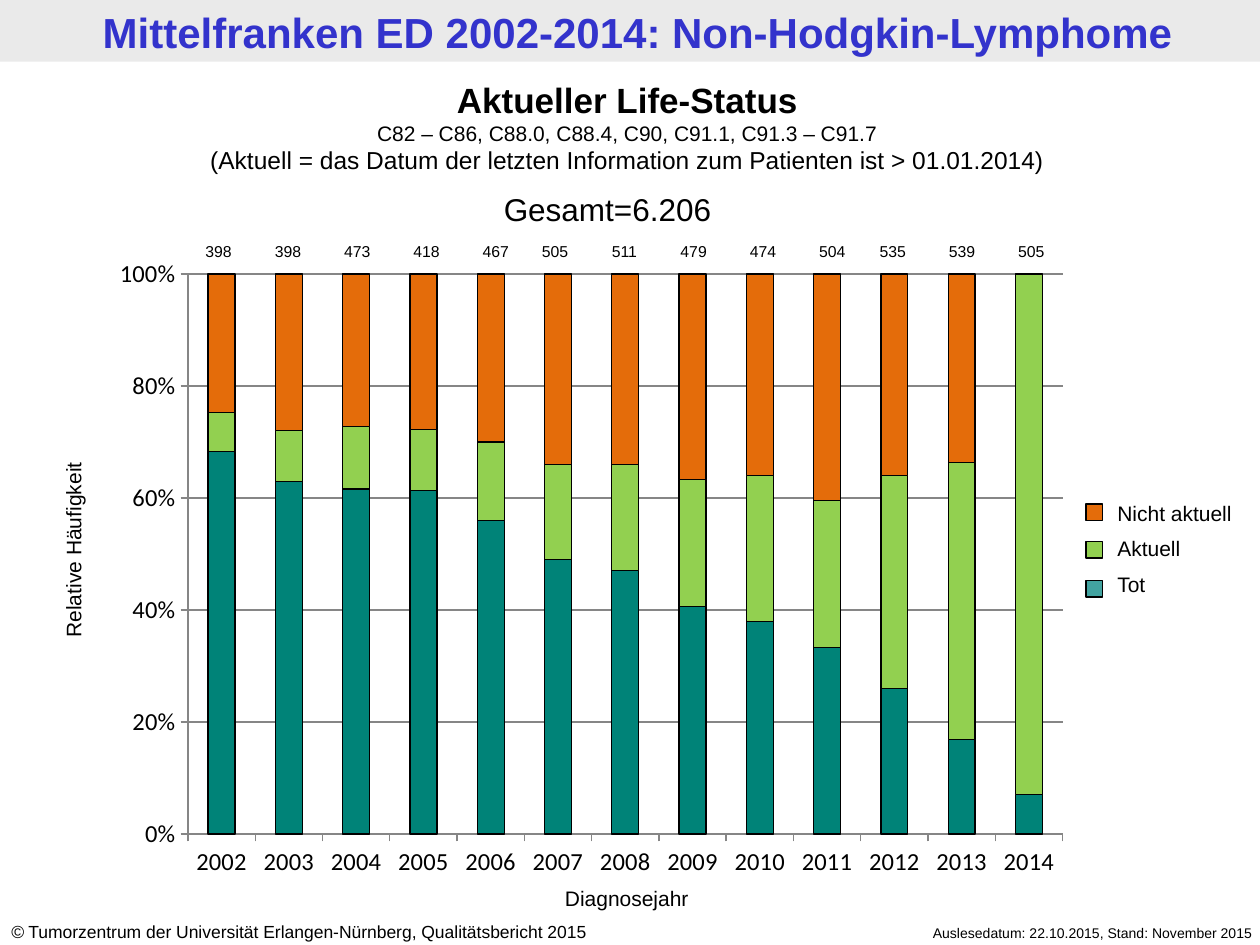
"""Builds the life status slide with a stacked column chart."""
from lxml.etree import SubElement
from pptx import Presentation
from pptx.chart.data import CategoryChartData
from pptx.dml.color import RGBColor
from pptx.enum.chart import XL_CHART_TYPE, XL_TICK_MARK
from pptx.enum.shapes import MSO_SHAPE
from pptx.enum.text import MSO_ANCHOR, PP_ALIGN
from pptx.oxml.ns import qn
from pptx.util import Inches, Pt

HUES = {"band": "EAEAEA", "title": "3333CC", "text": "000000", "dead": "008378",
        "key": "008380", "fresh": "92D050", "stale": "E46C0A", "grid": "868686"}
LEFT, MID, RIGHT = PP_ALIGN.LEFT, PP_ALIGN.CENTER, PP_ALIGN.RIGHT


def hue(name):
    return RGBColor.from_string(HUES[name])


def write(shape, text, size=12, bold=False, italic=False, color="text",
          align=LEFT, gap=0, more=False, join=False):
    frame = shape.text_frame
    frame.word_wrap = True
    para = frame.add_paragraph() if more else frame.paragraphs[0]
    para.alignment = align
    if gap:
        para.space_before = Pt(gap)
    run = para.add_run()
    run.text = text
    font = run.font
    font.name, font.size, font.bold, font.italic = "Arial", Pt(size), bold, italic
    font.color.rgb = hue(color)


deck = Presentation()
deck.slide_width, deck.slide_height = Inches(10), Inches(7.5)
slide = deck.slides.add_slide(deck.slide_layouts[5])
shapes = slide.shapes

title = shapes.title
title.left, title.top, title.width, title.height = map(Inches, (0.06, 0.01, 10, 0.49))
title.text_frame.vertical_anchor = MSO_ANCHOR.MIDDLE
write(title, "Mittelfranken ED 2002-2014: Non-Hodgkin-Lymphome",
      size=24, bold=True, color="title", align=MID)

band = shapes.add_shape(MSO_SHAPE.RECTANGLE, 0, 0, Inches(10), Inches(0.49))
band.shadow.inherit = False
band.fill.solid()
band.fill.fore_color.rgb = hue("band")
band.line.fill.background()
title.element.addprevious(band.element)

data = CategoryChartData()
data.categories = [str(year) for year in range(2002, 2015)]
rows = [
    ("Tot", "dead", (69, 63, 61, 62, 56, 49, 47, 41, 38, 33, 26, 17, 7)),
    ("Aktuell", "fresh", (7, 9, 11, 11, 14, 17, 19, 23, 26, 26, 38, 50, 93)),
    ("Nicht aktuell", "stale", (25, 28, 27, 28, 30, 34, 34, 37, 36, 40, 36, 34, 0)),
]
for name, color, vals in rows:
    data.add_series(name, vals)
chart = shapes.add_chart(XL_CHART_TYPE.COLUMN_STACKED_100, Inches(0.79), Inches(1.95),
                         Inches(7.8), Inches(5.11), data).chart
chart.has_legend = chart.has_title = False
chart.font.name, chart.font.size = "Calibri", Pt(14)
chart.font.color.rgb = hue("text")

plot = chart.plots[0]
plot.gap_width, plot.overlap, plot.vary_by_categories = 150, 100, False
for serie, (name, color, vals) in zip(plot.series, rows):
    serie.format.fill.solid()
    serie.format.fill.fore_color.rgb = hue(color)
    serie.format.line.color.rgb = hue("text")
    serie.format.line.width = Pt(0.75)

scale = chart.value_axis
scale.minimum_scale, scale.maximum_scale, scale.major_unit = 0, 1, 0.2
scale.tick_labels.number_format = "0%"
scale.tick_labels.number_format_is_linked = False
scale.has_major_gridlines = True
for axis in (scale, chart.category_axis):
    axis.major_tick_mark = XL_TICK_MARK.OUTSIDE
    axis.tick_labels.font.size = Pt(14)
for part in (scale, chart.category_axis, scale.major_gridlines):
    part.format.line.color.rgb = hue("grid")
    part.format.line.width = Pt(0.75)

area = chart.element.find(".//" + qn("c:plotArea"))
for old in area.findall(qn("c:layout")):
    area.remove(old)
layout = SubElement(area, qn("c:layout"))
area.insert(0, layout)
manual = SubElement(layout, qn("c:manualLayout"))
for tag, val in (("layoutTarget", "inner"), ("xMode", "edge"), ("yMode", "edge"),
                 ("x", "0.09"), ("y", "0.044"), ("w", "0.89"), ("h", "0.87")):
    SubElement(manual, qn("c:" + tag)).set("val", val)

texts = [
    ((6.65, 7.29, 3.39, 0.24), "Auslesedatum: 22.10.2015, Stand: November 2015", 8, RIGHT),
    ((3.85, 6.98, 2.25, 0.31), "Diagnosejahr", 12, MID),
    ((3.9, 1.46, 2.2, 0.4), "Gesamt=6.206", 18, LEFT),
]
counts = (398, 398, 473, 418, 467, 505, 511, 479, 474, 504, 535, 539, 505)
starts = (1.46, 4.13, 6.81)
for i, count in enumerate(counts):
    left = starts[i // 5] + 0.55 * (i % 5)
    texts.append(((left, 1.87, 0.55, 0.25), str(count), 9, MID))
for place, text, size, align in texts:
    write(shapes.add_textbox(*map(Inches, place)), text, size=size, align=align)

side = shapes.add_textbox(Inches(-0.62), Inches(4.21), Inches(2.41), Inches(0.31))
side.rotation = 270
write(side, "Relative Häufigkeit", align=MID)

foot = shapes.add_textbox(Inches(-0.01), Inches(7.26), Inches(5.24), Inches(0.27))
write(foot, "©", size=10, italic=True)
write(foot, " Tumorzentrum der Universität Erlangen-Nürnberg, Qualitätsbericht 2015", size=10)

head = shapes.add_textbox(Inches(-0.04), Inches(0.57), Inches(10.04), Inches(0.91))
write(head, "Aktueller Life-Status", size=20, bold=True, align=MID)
write(head, "C82 – C86, C88.0, C88.4, C90, C91.1, C91.3 – C91.7", align=MID, more=True)
write(head, "(Aktuell = das Datum der letzten Information zum Patienten ist > 01.01.2014)",
      size=14, align=MID, more=True)

names = shapes.add_textbox(Inches(8.77), Inches(3.92), Inches(1.23), Inches(0.91))
keys = (("Nicht aktuell", "stale", 4), ("Aktuell", "fresh", 4.3), ("Tot", "key", 4.61))
for i, (name, color, top) in enumerate(keys):
    write(names, name, gap=6 if i else 0, more=i > 0)
    key = shapes.add_shape(MSO_SHAPE.RECTANGLE, Inches(8.62), Inches(top),
                           Inches(0.13), Inches(0.13))
    key.shadow.inherit = False
    key.fill.solid()
    key.fill.fore_color.rgb = hue(color)
    key.line.color.rgb = hue("text")
    key.line.width = Pt(0.75)
    if color == "key":
        tint = key.element.spPr.find(qn("a:solidFill")).find(qn("a:srgbClr"))
        SubElement(tint, qn("a:alpha")).set("val", "74000")

deck.save("out.pptx")
